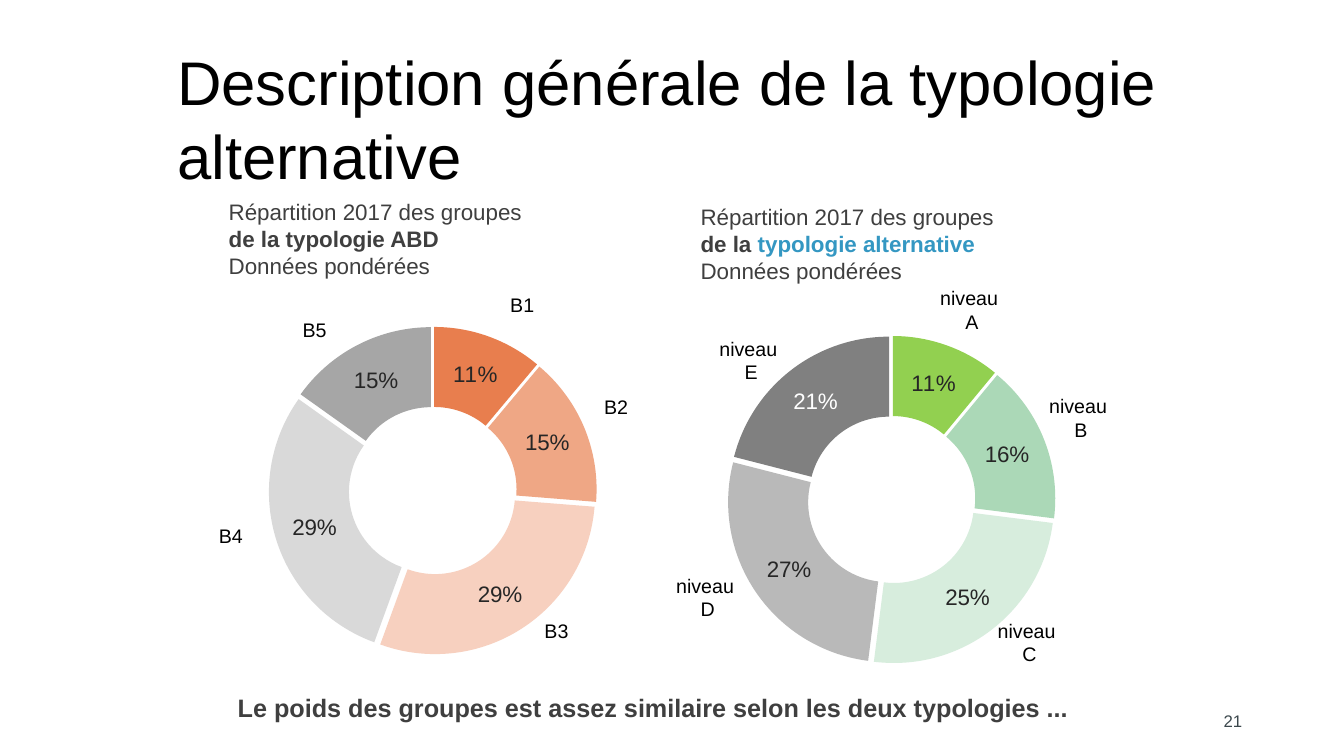
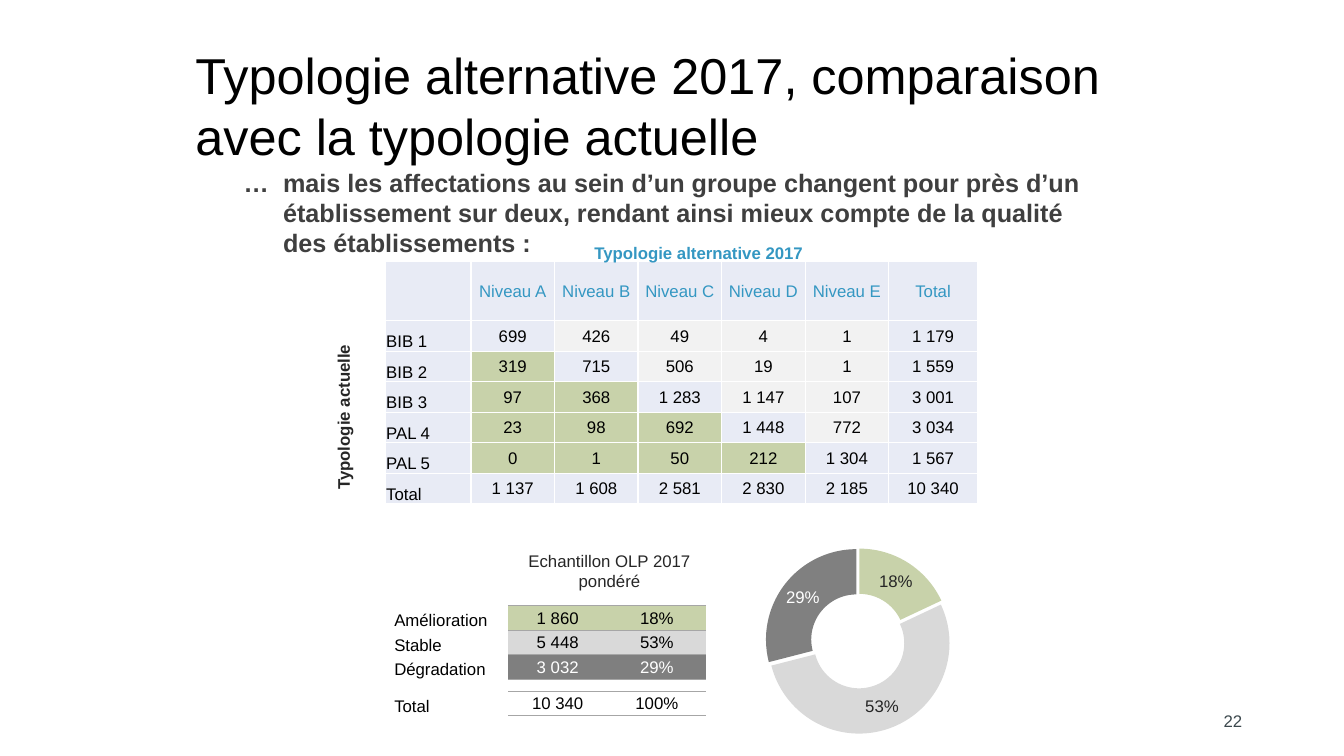
from lxml.etree import SubElement
from pptx import Presentation
from pptx.chart.data import CategoryChartData
from pptx.dml.color import RGBColor
from pptx.enum.chart import XL_CHART_TYPE
from pptx.enum.text import MSO_ANCHOR, PP_ALIGN
from pptx.oxml import parse_xml
from pptx.oxml.ns import nsdecls, qn
from pptx.util import Inches, Pt

BLACK = RGBColor(0x00, 0x00, 0x00)
WHITE = RGBColor(0xFF, 0xFF, 0xFF)
INK = RGBColor(0x26, 0x26, 0x26)
TEXT = RGBColor(0x3F, 0x3F, 0x3F)
SLATE = RGBColor(0x3C, 0x48, 0x4D)
BLUE = RGBColor(0x34, 0x97, 0xC2)
LAVENDER = RGBColor(0xE8, 0xEB, 0xF5)
PALE = RGBColor(0xF2, 0xF2, 0xF2)
SAGE = RGBColor(0xC8, 0xD2, 0xAA)
SILVER = RGBColor(0xD9, 0xD9, 0xD9)
MID_GREY = RGBColor(0xB9, 0xB9, 0xB9)
RULE_GREY = RGBColor(0xA6, 0xA6, 0xA6)
GREY = RGBColor(0x80, 0x80, 0x80)
DARK_GREY = RGBColor(0x7F, 0x7F, 0x7F)
ORANGES = [RGBColor(0xE8, 0x7E, 0x4E), RGBColor(0xEF, 0xA7, 0x85), RGBColor(0xF7, 0xD0, 0xBF)]
GREENS = [RGBColor(0x92, 0xD0, 0x50), RGBColor(0xAB, 0xD8, 0xB7), RGBColor(0xD7, 0xED, 0xDD)]

FONT = "Arial"
WIDTH, HEIGHT = Inches(13.33), Inches(7.5)
NO_STYLE = "{2D5ABB26-0587-4C30-8999-92F81FD0307C}"
CENTER, RIGHT = PP_ALIGN.CENTER, PP_ALIGN.RIGHT
LABEL = {"size": 14, "color": BLACK, "align": CENTER}
HEADING = {"size": 16, "color": TEXT}
STATEMENT = {"size": 18, "color": TEXT, "bold": True}
CAPTION = {"size": 12, "align": CENTER}
PLOT = {"x": 0.13, "y": 0.08, "w": 0.79, "h": 0.84}


def across(share):
    return int(WIDTH * share / 100)


def down(share):
    return int(HEIGHT * share / 100)


def place(left, top, width, height):
    return across(left), down(top), across(width), down(height)


def set_font(font, size, color, bold=False):
    for name, value in {"name": FONT, "size": Pt(size), "bold": bold}.items():
        setattr(font, name, value)
    font.color.rgb = color


def write(tf, paragraphs, size, color, bold=False, align=None):
    for i, runs in enumerate(paragraphs):
        p = tf.add_paragraph() if i else tf.paragraphs[0]
        p.alignment = align
        for text, changes in runs:
            for j, line in enumerate(text.split("\n")):
                if j:
                    p.add_line_break()
                if line:
                    r = p.add_run()
                    r.text = line
                    set_font(r.font, **{"size": size, "color": color, "bold": bold, **changes})


def add_text(slide, box, content, **style):
    sp = slide.shapes.add_textbox(*place(*box))
    sp.text_frame.word_wrap = True
    paragraphs = [[(content, {})]] if isinstance(content, str) else content
    write(sp.text_frame, paragraphs, **style)
    return sp


def add_slide(prs, number, title, box, size):
    slide = prs.slides.add_slide(prs.slide_layouts[6])
    add_text(slide, box, title, size=size, color=BLACK)
    sp = add_text(slide, (70.67, 92.67, 22.5, 5.33), str(number), size=12, color=SLATE, align=RIGHT)
    sp.text_frame.vertical_anchor = MSO_ANCHOR.MIDDLE
    return slide


def add_doughnut(slide, box, values, colors, size, light_point=None):
    data = CategoryChartData(number_format="0%")
    data.categories = [str(i + 1) for i in range(len(values))]
    data.add_series("Series 1", values)
    chart = slide.shapes.add_chart(XL_CHART_TYPE.DOUGHNUT, *place(*box), data).chart
    set_font(chart.font, 18, BLACK)
    chart.has_legend = chart.has_title = False
    plot = chart.plots[0]
    plot.vary_by_categories = False

    area = chart._chartSpace.chart.plotArea
    for layout in area.findall(qn("c:layout")):
        area.remove(layout)
    modes = "".join(f'<c:{k}Mode val="edge"/>' for k in "xy")
    sizes = "".join(f'<c:{k} val="{v}"/>' for k, v in PLOT.items())
    area.insert(0, parse_xml(
        f'<c:layout {nsdecls("c")}><c:manualLayout><c:layoutTarget val="inner"/>'
        f"{modes}{sizes}</c:manualLayout></c:layout>"))

    series = plot.series[0]
    series._element.find(qn("c:tx")).addnext(
        parse_xml(f'<c:explosion {nsdecls("c")} val="5"/>'))
    for i, color in enumerate(colors):
        fill = series.points[i].format.fill
        fill.solid()
        fill.fore_color.rgb = color
    labels = series.data_labels
    options = {"show_value": True, "show_percentage": False, "number_format": "0%",
               "number_format_is_linked": False}
    for name, value in options.items():
        setattr(labels, name, value)
    set_font(labels.font, size, INK)
    if light_point is not None:
        set_font(series.points[light_point].data_label.font, size, WHITE)


def add_grid(slide, left, top, cols, rows):
    box = place(left, top, sum(cols), sum(rows))
    table = slide.shapes.add_table(len(rows), len(cols), *box).table
    table.first_row = table.horz_banding = False
    table._tbl.tblPr.find(qn("a:tableStyleId")).text = NO_STYLE
    for column, share in zip(table.columns, cols):
        column.width = across(share)
    for row, share in zip(table.rows, rows):
        row.height = down(share)
    return table


def border(cell, sides, color, width):
    for i, side in enumerate(sides):
        cell._tc.get_or_add_tcPr().insert(i, parse_xml(
            f'<a:ln{side} {nsdecls("a")} w="{Pt(width)}"><a:solidFill>'
            f'<a:srgbClr val="{color}"/></a:solidFill></a:ln{side}>'))


def fill_cell(cell, text, fill, color, is_label):
    settings = {
        "margin_left": Inches(0.01), "margin_right": Inches(0.01),
        "margin_top": Inches(0.01), "margin_bottom": 0,
        "vertical_anchor": MSO_ANCHOR.BOTTOM if is_label else MSO_ANCHOR.MIDDLE,
    }
    for name, value in settings.items():
        setattr(cell, name, value)
    if text:
        write(cell.text_frame, [[(text, {})]], 12, color, align=None if is_label else CENTER)
    else:
        SubElement(cell.text_frame.paragraphs[0]._p, qn("a:endParaRPr")).set("sz", "400")
    if fill is None:
        cell.fill.background()
    else:
        cell.fill.solid()
        cell.fill.fore_color.rgb = fill


def add_cross_table(slide):
    content = [
        ["", "Niveau A", "Niveau B", "Niveau C", "Niveau D", "Niveau E", "Total"],
        ["BIB 1", "699", "426", "49", "4", "1", "1 179"],
        ["BIB 2", "319", "715", "506", "19", "1", "1 559"],
        ["BIB 3", "97", "368", "1 283", "1 147", "107", "3 001"],
        ["PAL 4", "23", "98", "692", "1 448", "772", "3 034"],
        ["PAL 5", "0", "1", "50", "212", "1 304", "1 567"],
        ["Total", "1 137", "1 608", "2 581", "2 830", "2 185", "10 340"],
    ]
    table = add_grid(slide, 28.66, 34.53, [6.38] + [6.22] * 5 + [6.6], [7.9] + [4.04] * 6)
    for i, row in enumerate(content):
        for j, text in enumerate(row):
            fill = LAVENDER
            if 1 <= i <= 5 and 1 <= j <= 5 and i != j:
                fill = SAGE if j < i else PALE
            cell = table.cell(i, j)
            fill_cell(cell, text, fill, BLACK if i else BLUE, j == 0)
            border(cell, "LRTB", WHITE, 1)


def add_summary_table(slide):
    content = [
        (["Amélioration", "1 860", "18%"], SAGE, BLACK),
        (["Stable", "5 448", "53%"], SILVER, BLACK),
        (["Dégradation", "3 032", "29%"], DARK_GREY, WHITE),
        (["", "", ""], None, BLACK),
        (["Total", "10 340", "100%"], None, BLACK),
    ]
    table = add_grid(slide, 29.26, 80.13, [8.55, 7.38, 7.38], [3.24] * 3 + [1.6, 3.24])
    for i, (row, fill, color) in enumerate(content):
        for j, text in enumerate(row):
            cell = table.cell(i, j)
            fill_cell(cell, text, fill if j else None, color if j else BLACK, j == 0)
            if j:
                border(cell, "TB", RULE_GREY, 0.75)


def build_distribution(prs):
    slide = add_slide(prs, 21, "Description générale de la typologie alternative",
                      (12.45, 5.2, 74.64, 21.07), 44)
    first_line = ("Répartition 2017 des groupes \n", {})
    last_line = [("Données pondérées", {})]
    bold = {"bold": True}

    add_doughnut(slide, (50.11, 38.13, 30.91, 56), [0.11, 0.16, 0.25, 0.27, 0.21],
                 GREENS + [MID_GREY, GREY], 16, 4)
    accent = ("typologie alternative", {"bold": True, "color": BLUE})
    add_text(slide, (51.39, 26.27, 35.11, 12.13),
             [[first_line, ("de la ", bold), accent], last_line], **HEADING)
    levels = {"A": (68.04, 37.2), "B": (76.14, 51.47), "C": (72.32, 81.2),
              "D": (48.39, 75.2), "E": (51.61, 43.87)}
    for level, corner in levels.items():
        add_text(slide, (*corner, 8.55, 7.6), f"niveau \n{level}", **LABEL)

    add_doughnut(slide, (15.98, 36.93, 30.91, 56), [0.11, 0.15, 0.29, 0.29, 0.15],
                 ORANGES + [SILVER, RULE_GREY], 16)
    add_text(slide, (16.28, 25.6, 35.11, 12.13),
             [[first_line, ("de la typologie ABD", bold)], last_line], **HEADING)
    groups = {"B1": (34.58, 38.13), "B2": (41.56, 51.6), "B3": (37.13, 81.2),
              "B4": (12.9, 68.67), "B5": (19.13, 41.33)}
    for group, corner in groups.items():
        add_text(slide, (*corner, 8.55, 4.53), group, **LABEL)

    add_text(slide, (16.95, 90.93, 71.49, 5.33),
             "Le poids des groupes est assez similaire selon les deux typologies ...", **STATEMENT)


def build_comparison(prs):
    slide = add_slide(prs, 22, "Typologie alternative 2017, comparaison avec la typologie actuelle",
                      (13.8, 5.2, 75.77, 17.47), 36)
    add_cross_table(slide)
    add_text(slide, (37.36, 31.47, 29.26, 4), "Typologie alternative 2017",
             color=BLUE, bold=True, **CAPTION)
    sp = add_text(slide, (16.5, 53.2, 18.08, 4), "Typologie actuelle",
                  color=INK, bold=True, **CAPTION)
    sp.rotation = 270
    add_summary_table(slide)
    add_text(slide, (38.11, 72.13, 14.48, 6.67), "Echantillon OLP 2017\npondéré",
             color=INK, **CAPTION)
    sp = add_text(slide, (17.4, 21.47, 64.44, 13.47),
                  "… \tmais les affectations au sein d’un groupe changent pour près d’un "
                  "établissement sur deux, rendant ainsi mieux compte de la qualité "
                  "des établissements :", **STATEMENT)
    pPr = sp.text_frame.paragraphs[0]._p.get_or_add_pPr()
    for name, length in {"marL": 0.39, "indent": -0.39}.items():
        pPr.set(name, str(Inches(length)))
    add_doughnut(slide, (54.69, 69.6, 17.48, 30.4), [0.18, 0.53, 0.29],
                 [SAGE, SILVER, GREY], 12, 2)


def main():
    prs = Presentation()
    prs.slide_width, prs.slide_height = WIDTH, HEIGHT
    build_distribution(prs)
    build_comparison(prs)
    prs.save("out.pptx")


if __name__ == "__main__":
    main()
